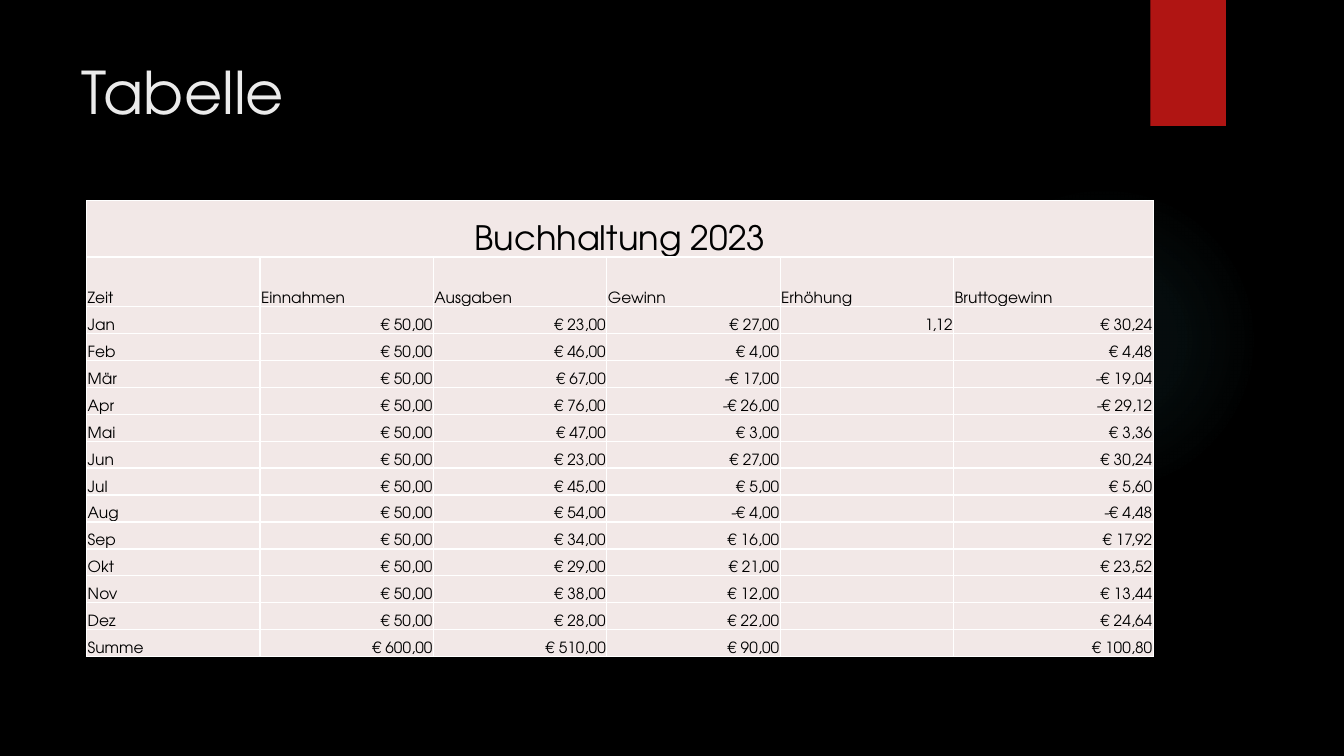
from dataclasses import dataclass

from lxml import etree
from pptx import Presentation, util as u
from pptx.dml.color import RGBColor
from pptx.enum import shapes, text
from pptx.oxml import ns


@dataclass(frozen=True)
class Theme:
    font: str = "TeX Gyre Adventor"
    background: str = "000000"
    glow: str = "50B9C1"
    accent: str = "B01513"
    shadow: str = "000000"
    title_color: str = "EBEBEB"
    ink: str = "000000"
    cell: str = "F2E8E7"
    border: str = "FFFFFF"
    title_size: int = 42
    caption_size: int = 24
    body_size: int = 11


def apply(target, values):
    for name, value in values.items():
        setattr(target, name, value)


def add_node(parent, tag, **attributes):
    return etree.SubElement(parent, ns.qn(f"a:{tag}"), **attributes)


def add_color(parent, color, alpha):
    node = add_node(parent, "srgbClr", val=color)
    add_node(node, "alpha", val=str(alpha * 1000))


class SlideBuilder:
    def __init__(self, deck, theme):
        self.theme = theme
        self.slide = deck.slides.add_slide(deck.slide_layouts[5])
        self.paint(self.slide.background.fill, theme.background)

    def paint(self, fill, color):
        fill.solid()
        fill.fore_color.rgb = RGBColor.from_string(color)

    def add_span(self, para, content, size, color):
        span = para.add_run()
        span.text = content
        apply(span.font, {"name": self.theme.font, "size": u.Pt(size), "bold": False})
        span.font.color.rgb = RGBColor.from_string(color)

    def shape(self, kind, left, top, width, height, color):
        box = self.slide.shapes.add_shape(
            kind, *map(u.Inches, (left, top, width, height)))
        box.shadow.inherit = False
        self.paint(box.fill, color)
        box.line.fill.background()
        return box

    def glow(self, left, top, size, stops):
        box = self.shape(shapes.MSO_SHAPE.OVAL, left, top, size, size, self.theme.glow)
        solid = box._element.spPr.find(ns.qn("a:solidFill"))
        gradient = etree.Element(ns.qn("a:gradFill"), rotWithShape="1")
        stop_list = add_node(gradient, "gsLst")
        for position, alpha in stops:
            stop = add_node(stop_list, "gs", pos=str(position * 1000))
            add_color(stop, self.theme.glow, alpha)
        circle = add_node(gradient, "path", path="circle")
        add_node(circle, "fillToRect", **dict.fromkeys("ltrb", "50000"))
        solid.getparent().replace(solid, gradient)

    def ribbon(self, left, top, width, height):
        box = self.shape(
            shapes.MSO_SHAPE.RECTANGLE, left, top, width, height, self.theme.accent)
        effects = box._element.spPr.find(ns.qn("a:effectLst"))
        shadow = add_node(
            effects, "outerShdw", blurRad=str(u.Pt(3)), dist=str(u.Pt(2)),
            dir="5400000", rotWithShape="0")
        add_color(shadow, self.theme.shadow, 45)

    def title(self, content, left, top, width, height):
        box = self.slide.shapes.title
        apply(box, {"left": u.Inches(left), "top": u.Inches(top),
                    "width": u.Inches(width), "height": u.Inches(height)})
        apply(box.text_frame, {"vertical_anchor": text.MSO_ANCHOR.TOP,
                               "word_wrap": True,
                               "auto_size": text.MSO_AUTO_SIZE.NONE})
        para = box.text_frame.paragraphs[0]
        para.alignment = text.PP_ALIGN.LEFT
        self.add_span(para, content, self.theme.title_size, self.theme.title_color)
        self.slide.shapes._spTree.append(box._element)

    def cell(self, cell, content, size, alignment):
        apply(cell, {"vertical_anchor": text.MSO_ANCHOR.BOTTOM,
                     "margin_left": u.Inches(0.01), "margin_right": u.Inches(0.01),
                     "margin_top": u.Inches(0.01), "margin_bottom": 0})
        properties = cell._tc.get_or_add_tcPr()
        for side in "LRTB":
            line = add_node(properties, f"ln{side}", w=str(u.Pt(1)))
            add_node(add_node(line, "solidFill"), "srgbClr", val=self.theme.border)
        self.paint(cell.fill, self.theme.cell)
        para = cell.text_frame.paragraphs[0]
        para.alignment = alignment
        if content:
            self.add_span(para, content, size, self.theme.ink)
        else:
            add_node(para._p, "endParaRPr", sz=str(size * 100))

    def table(self, caption, rows, left, top, widths, heights):
        frame = self.slide.shapes.add_table(
            len(heights), len(widths), u.Inches(left), u.Inches(top),
            u.Inches(sum(widths)), u.Inches(sum(heights)))
        table = frame.table
        apply(table, {"first_row": False, "horz_banding": False})
        for column, width in zip(table.columns, widths):
            column.width = u.Inches(width)
        for row, height in zip(table.rows, heights):
            row.height = u.Inches(height)
        table.cell(0, 0).merge(table.cell(0, len(widths) - 1))
        caption_row = [caption] + [""] * (len(widths) - 1)
        for i, values in enumerate([caption_row] + rows):
            for j, value in enumerate(values):
                alignment = text.PP_ALIGN.LEFT
                size = self.theme.body_size
                if i == 0:
                    alignment, size = text.PP_ALIGN.CENTER, self.theme.caption_size
                elif i > 1 and j > 0:
                    alignment = text.PP_ALIGN.RIGHT
                self.cell(table.cell(i, j), value, size, alignment)


def euro(cents):
    sign = "-" if cents < 0 else ""
    return f"{sign}€ {abs(cents) // 100},{abs(cents) % 100:02d}"


def account_row(label, income, expense, factor=""):
    profit = income - expense
    return [label, euro(income * 100), euro(expense * 100), euro(profit * 100),
            factor, euro(profit * 112)]


def main():
    deck = Presentation()
    apply(deck, {"slide_width": u.Inches(13.33), "slide_height": u.Inches(7.5)})

    income = 50
    expenses = {"Jan": 23, "Feb": 46, "Mär": 67, "Apr": 76, "Mai": 47, "Jun": 23,
                "Jul": 45, "Aug": 54, "Sep": 34, "Okt": 29, "Nov": 38, "Dez": 28}
    rows = [["Zeit", "Einnahmen", "Ausgaben", "Gewinn", "Erhöhung", "Bruttogewinn"]]
    rows += [account_row(month, income, expense, "1,12" if month == "Jan" else "")
             for month, expense in expenses.items()]
    rows.append(account_row("Summe", income * len(expenses), sum(expenses.values())))

    header_heights = [0.56, 0.49]
    body_count = len(rows) - 1
    body_height = (4.53 - sum(header_heights)) / body_count

    builder = SlideBuilder(deck, Theme())
    builder.glow(9.41, 1.83, 3.08, [(0, 7), (36, 6), (69, 0)])
    builder.ribbon(11.41, 0, 0.75, 1.25)
    builder.title("Tabelle", 0.71, 0.5, 10.29, 1.53)
    builder.table("Buchhaltung 2023", rows, 0.86, 1.99, [1.72] * 5 + [1.98],
                  header_heights + [body_height] * body_count)
    deck.save("out.pptx")


if __name__ == "__main__":
    main()
